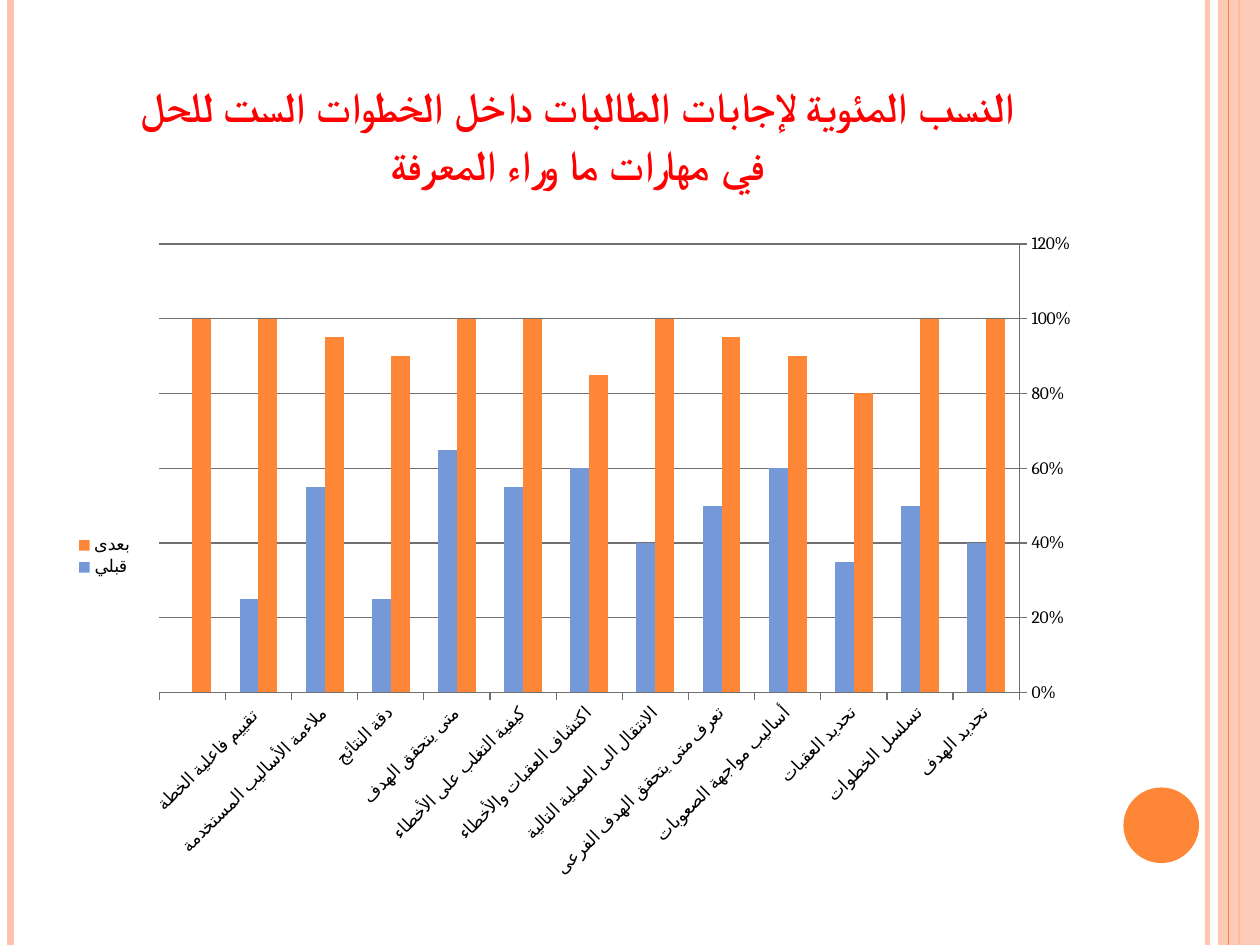
"""Build a slide with a clustered column chart of answer percentages before and after."""
from dataclasses import dataclass

from lxml.etree import SubElement
from pptx import Presentation
from pptx.chart.data import CategoryChartData
from pptx.dml.color import RGBColor
from pptx.enum.chart import XL_CHART_TYPE as CHART, XL_LEGEND_POSITION as LEGEND, XL_TICK_MARK as TICK
from pptx.enum.shapes import MSO_CONNECTOR as CONN, MSO_SHAPE as SHAPE
from pptx.enum.text import MSO_ANCHOR as ANCHOR, MSO_AUTO_SIZE as AUTO, PP_ALIGN as ALIGN
from pptx.oxml import parse_xml
from pptx.oxml.ns import nsdecls, qn
from pptx.util import Pt


@dataclass(frozen=True)
class Theme:
    """Colours, fonts and type sizes of the slide."""
    orange: RGBColor = RGBColor(0xFE, 0x86, 0x37)
    peach: RGBColor = RGBColor(0xFE, 0xC3, 0xAE)
    blue: RGBColor = RGBColor(0x75, 0x98, 0xD9)
    red: RGBColor = RGBColor(0xFF, 0x00, 0x00)
    black: RGBColor = RGBColor(0x00, 0x00, 0x00)
    gray: RGBColor = RGBColor(0x70, 0x70, 0x70)
    title_font: str = "Times New Roman"
    chart_font: str = "Cambria"
    title_size: int = 24
    chart_size: int = 10


THEME = Theme()
WIDTH, HEIGHT = 720, 540
CHART_BOX = (36, 126, 588, 384)
PLOT_BOX = (55, 13.5, 491.5, 256.25)
TITLE = "النسب المئوية لإجابات الطالبات داخل الخطوات الست للحل\vفي مهارات ما وراء المعرفة"
STEPS = [
    ("تحديد الهدف", 1, 0.4),
    ("تسلسل الخطوات", 1, 0.5),
    ("تحديد العقبات", 0.8, 0.35),
    ("أساليب مواجهة الصعوبات", 0.9, 0.6),
    ("تعرف متى يتحقق الهدف الفرعى", 0.95, 0.5),
    ("الانتقال الى العملية التالية", 1, 0.4),
    ("اكتشاف العقبات والأخطاء", 0.85, 0.6),
    ("كيفية التغلب على الأخطاء", 1, 0.55),
    ("متى يتحقق الهدف", 1, 0.65),
    ("دقة النتائج", 0.9, 0.25),
    ("ملاءمة الأساليب المستخدمة", 0.95, 0.55),
    ("تقييم فاعلية الخطة ", 1, 0.25),
    ("", 1, None),
]


def set_attrs(obj, **values):
    """Set each named value on the object."""
    for name, value in values.items():
        setattr(obj, name, value)


def place(obj, left, top, width, height):
    """Move and size a shape, in points."""
    set_attrs(obj, left=Pt(left), top=Pt(top), width=Pt(width), height=Pt(height))


def set_alpha(sp, percent):
    """Make the first colour of a shape partly transparent."""
    clr = next(sp._element.spPr.iter(qn("a:srgbClr")))
    SubElement(clr, qn("a:alpha"), val=str(percent * 1000))


def add_stripe(slide, x, color, weight, alpha=100):
    """Draw a vertical line over the full slide height."""
    line = slide.shapes.add_connector(CONN.STRAIGHT, Pt(x), 0, Pt(x), Pt(HEIGHT))
    line.line.color.rgb = color
    line.line.width = Pt(weight)
    set_alpha(line, alpha)
    SubElement(line._element.spPr, qn("a:effectLst"))


def add_block(slide, kind, box, color, alpha=100):
    """Draw a filled shape without an outline."""
    sp = slide.shapes.add_shape(kind, *map(Pt, box))
    sp.shadow.inherit = False
    sp.fill.solid()
    sp.fill.fore_color.rgb = color
    sp.line.fill.background()
    set_alpha(sp, alpha)


def add_title(slide):
    """Fill and format the right-to-left title."""
    sp = slide.shapes.title
    place(sp, 36, 21.6, 588, 90)
    tf = sp.text_frame
    set_attrs(tf, text=TITLE, word_wrap=True, auto_size=AUTO.NONE, vertical_anchor=ANCHOR.BOTTOM)
    p = tf.paragraphs[0]
    set_attrs(p, alignment=ALIGN.CENTER, line_spacing=1.15)
    p._p.get_or_add_pPr().set("rtl", "1")
    for r in p.runs:
        set_attrs(r.font, name=THEME.title_font, size=Pt(THEME.title_size), bold=True)
        r.font.color.rgb = THEME.red
        props = r._r.get_or_add_rPr()
        props.set("cap", "small")
        SubElement(props, qn("a:cs"), typeface=THEME.title_font)


def set_plot_layout(chart):
    """Fix the inner plot area as fractions of the chart."""
    plot_area = chart._chartSpace.chart.plotArea
    for old in plot_area.findall(qn("c:layout")):
        plot_area.remove(old)
    modes = '<c:layoutTarget val="inner"/><c:xMode val="edge"/><c:yMode val="edge"/>'
    width, height = CHART_BOX[2:]
    sizes = "".join(f'<c:{key} val="{length / full}"/>'
                    for key, length, full in zip("xywh", PLOT_BOX, (width, height) * 2))
    plot_area.insert(0, parse_xml(
        f'<c:layout {nsdecls("c")}><c:manualLayout>{modes}{sizes}</c:manualLayout></c:layout>'))


def format_axes(chart):
    """Style both axes, with categories running from right to left."""
    cat, val = chart.category_axis, chart.value_axis
    set_attrs(cat, reverse_order=True, has_major_gridlines=False)
    set_attrs(val, minimum_scale=0, maximum_scale=1.2, major_unit=0.2, has_major_gridlines=True)
    set_attrs(val.tick_labels, number_format="0%", number_format_is_linked=False)
    for axis in (cat, val):
        set_attrs(axis, major_tick_mark=TICK.OUTSIDE, minor_tick_mark=TICK.NONE)
        set_attrs(axis.tick_labels.font, name=THEME.chart_font, size=Pt(THEME.chart_size))
    for line in (cat.format.line, val.format.line, val.major_gridlines.format.line):
        line.color.rgb = THEME.gray
        line.width = Pt(0.75)
    cat._element.find(qn("c:txPr")).find(qn("a:bodyPr")).set("rot", "-2700000")


def add_step_chart(slide):
    """Add the column chart of the solution steps."""
    names, after, before = zip(*STEPS)
    data = CategoryChartData(number_format="0%")
    data.categories = names
    data.add_series("بعدى", after)
    data.add_series("قبلي", before)
    chart = slide.shapes.add_chart(CHART.COLUMN_CLUSTERED, *map(Pt, CHART_BOX), data).chart
    set_attrs(chart, has_title=False, has_legend=True)
    set_attrs(chart.font, name=THEME.chart_font, size=Pt(THEME.chart_size))
    chart.font.color.rgb = THEME.black
    set_attrs(chart.legend, position=LEGEND.LEFT, include_in_layout=False)
    plot = chart.plots[0]
    set_attrs(plot, gap_width=150, overlap=0, vary_by_categories=False)
    for series, color in zip(plot.series, (THEME.orange, THEME.blue)):
        series.format.fill.solid()
        series.format.fill.fore_color.rgb = color
    format_axes(chart)
    set_plot_layout(chart)


def main():
    """Build and save the slide."""
    prs = Presentation()
    set_attrs(prs, slide_width=Pt(WIDTH), slide_height=Pt(HEIGHT))
    slide = prs.slides.add_slide(prs.slide_layouts[5])
    add_stripe(slide, 690, THEME.peach, 3, 93)
    add_stripe(slide, 6, THEME.peach, 4.5)
    add_stripe(slide, 708, THEME.orange, 1.5)
    add_block(slide, SHAPE.RECTANGLE, (696, 0, 24, HEIGHT), THEME.peach, 87)
    add_stripe(slide, 702, THEME.orange, 0.75)
    add_block(slide, SHAPE.OVAL, (642, 450, 43.2, 43.2), THEME.orange)
    add_title(slide)
    add_step_chart(slide)
    prs.save("out.pptx")


if __name__ == "__main__":
    main()
